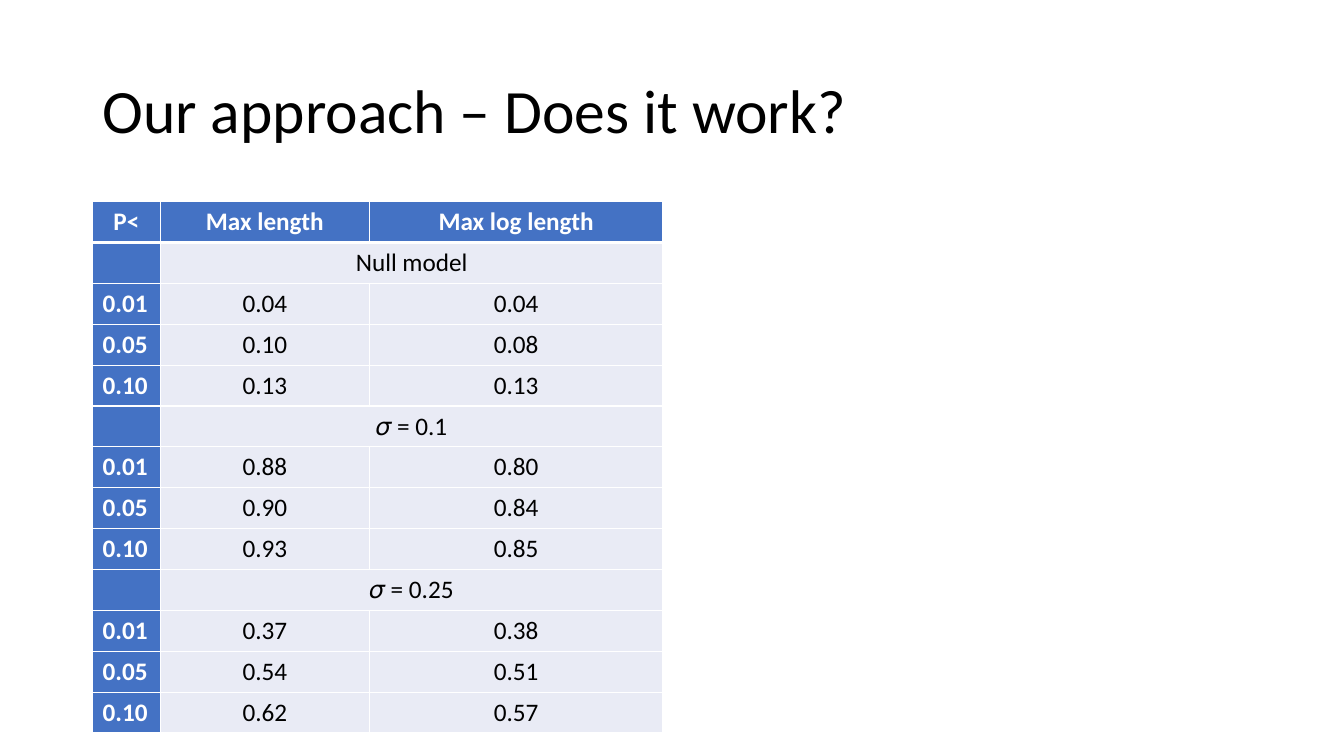
from lxml.etree import SubElement
from pptx import Presentation
from pptx.dml.color import RGBColor
from pptx.enum.text import MSO_ANCHOR, PP_ALIGN
from pptx.oxml.ns import qn
from pptx.util import Cm, Pt

BLUE, PALE, WHITE, BLACK = "4472C4", "E9EBF5", "FFFFFF", "000000"


def color(code):
    return RGBColor.from_string(code)


def write(para, text, size, code, bold, align):
    para.alignment = align
    run = para.add_run()
    run.text = text
    font = run.font
    font.name, font.size, font.bold = "Calibri", Pt(size), bold
    font.color.rgb = color(code)


deck = Presentation()
deck.slide_width, deck.slide_height = Cm(33.87), Cm(19.05)
slide = deck.slides.add_slide(deck.slide_layouts[5])

# Title
title = slide.shapes.title
title.left, title.top = Cm(2.33), Cm(1.01)
title.width, title.height = Cm(29.21), Cm(3.68)
frame = title.text_frame
frame.word_wrap = True
frame.vertical_anchor = MSO_ANCHOR.MIDDLE
head = frame.paragraphs[0]
head.line_spacing = 0.9
write(head, "Our approach – Does it work?", 44, BLACK, False, PP_ALIGN.LEFT)

# Results: a model row has one wide cell
rows = [
    ("P<", "Max length", "Max log length"),
    ("", "Null model"),
    ("0.01", "0.04", "0.04"),
    ("0.05", "0.10", "0.08"),
    ("0.10", "0.13", "0.13"),
    ("", "𝜎 = 0.1"),
    ("0.01", "0.88", "0.80"),
    ("0.05", "0.90", "0.84"),
    ("0.10", "0.93", "0.85"),
    ("", "𝜎 = 0.25"),
    ("0.01", "0.37", "0.38"),
    ("0.05", "0.54", "0.51"),
    ("0.10", "0.62", "0.57"),
]
widths = [1.71, 5.27, 7.4]
high = 1.03

# Table
table = slide.shapes.add_table(
    len(rows), len(widths), Cm(2.33), Cm(5.08),
    Cm(sum(widths)), Cm(high * len(rows))).table
table.first_col = True
table.horz_banding = False
for col, width in zip(table.columns, widths):
    col.width = Cm(width)

for r, row in enumerate(rows):
    table.rows[r].height = Cm(high)
    if len(row) == 2:
        table.cell(r, 1).merge(table.cell(r, 2))
    for c in range(len(widths)):
        cell = table.cell(r, c)
        label = r == 0 or c == 0

        # White cell borders, thicker around the header's lower edge
        props = cell._tc.get_or_add_tcPr()
        for side in ("L", "R", "T", "B"):
            thick = (r == 0 and side == "B") or (r == 1 and side == "T")
            line = SubElement(props, qn(f"a:ln{side}"), w=str(Pt(3 if thick else 1)))
            fill = SubElement(line, qn("a:solidFill"))
            SubElement(fill, qn("a:srgbClr"), val=WHITE)
        cell.fill.solid()
        cell.fill.fore_color.rgb = color(BLUE if label else PALE)

        # Cell text
        if c < len(row) and row[c]:
            align = PP_ALIGN.LEFT if c == 0 and r > 0 else PP_ALIGN.CENTER
            write(cell.text_frame.paragraphs[0], row[c], 18,
                  WHITE if label else BLACK, label, align)

deck.save("out.pptx")
